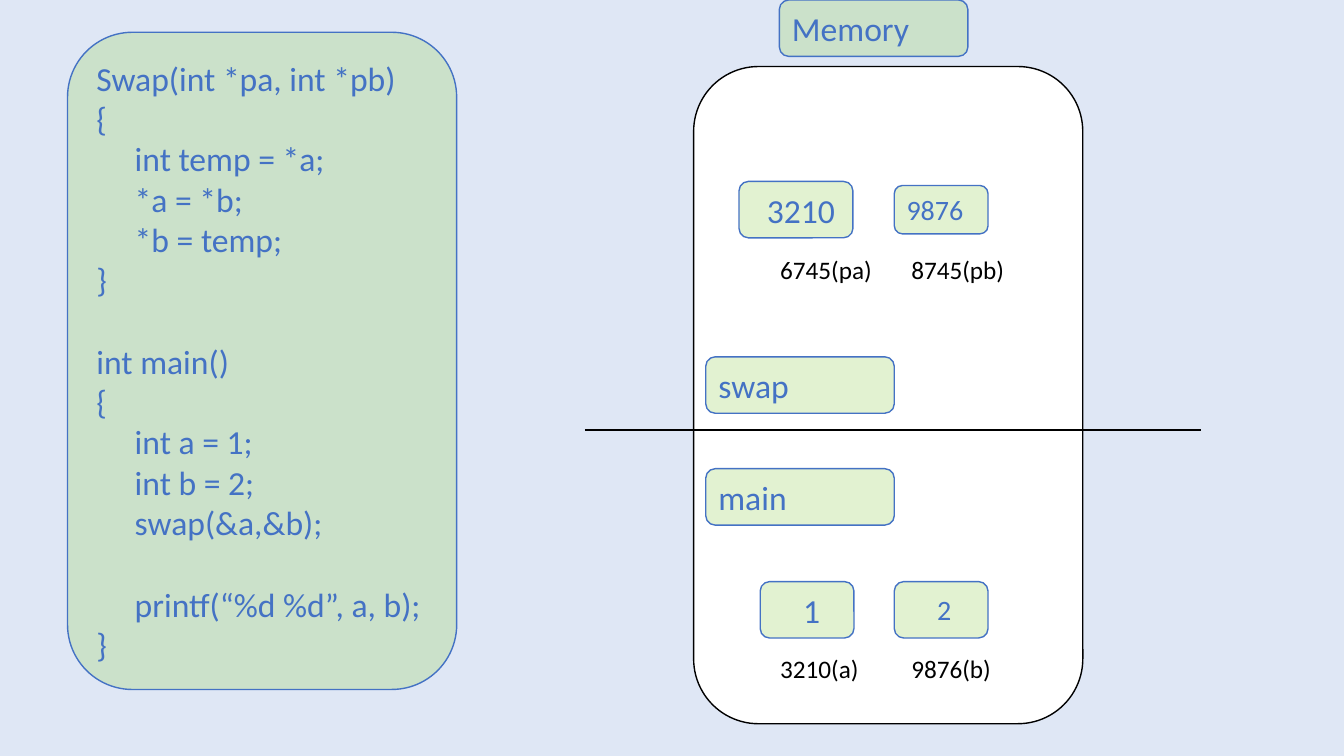
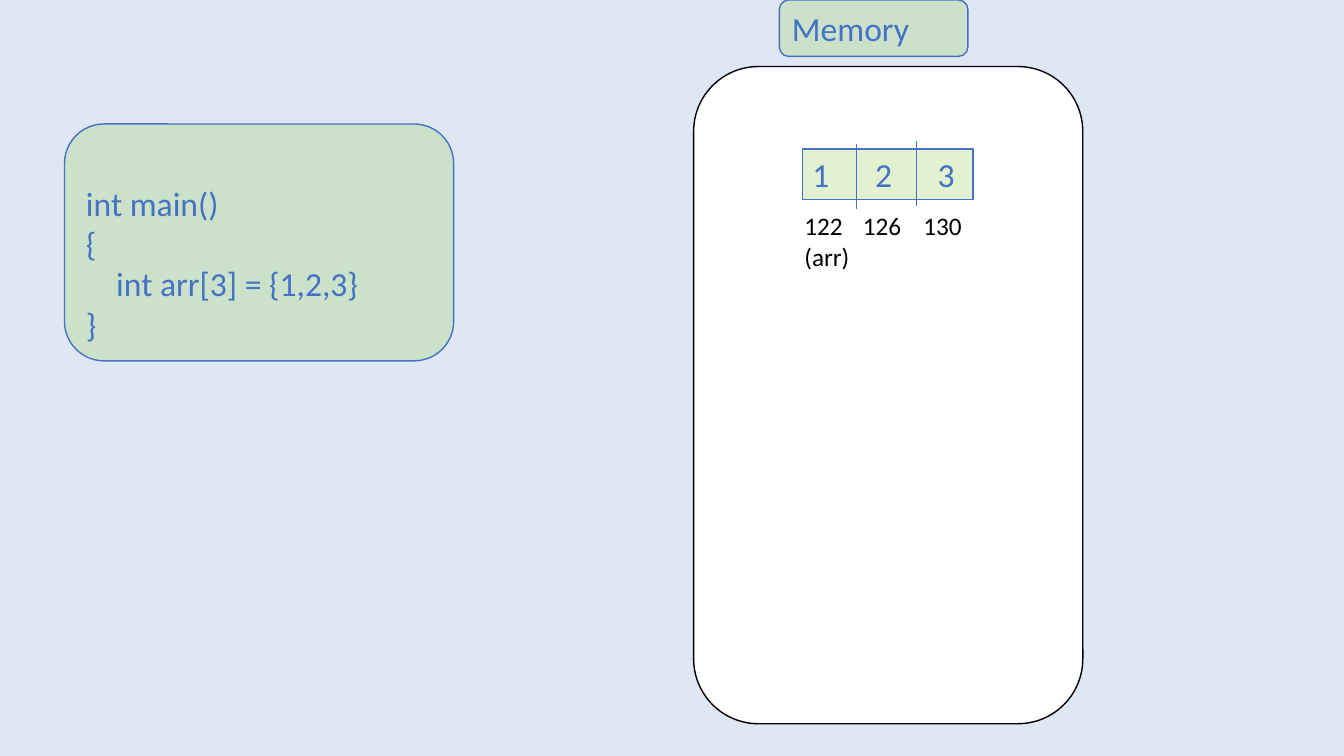
from collections import namedtuple

from lxml.etree import SubElement
from pptx import Presentation
from pptx.dml.color import RGBColor
from pptx.enum.shapes import MSO_CONNECTOR as CONNECTOR, MSO_SHAPE as SHAPE
from pptx.enum.text import MSO_ANCHOR as ANCHOR, PP_ALIGN as ALIGN
from pptx.oxml.ns import qn
from pptx.util import Pt

Box = namedtuple("Box", "left top width height")

PX = 9144  # EMU, 100 px to the inch
FONT = "Calibri"
COLORS = {
    "page": "DFE7F5",
    "blue": "4472C4",
    "green": "92D050",
    "white": "FFFFFF",
    "black": "000000",
}
GREEN_OPACITY = 26
CODE_SIZE = 24
CODE_LINE = 41
MEMORY = Box(688, 66, 386, 652)

SWAP_CODE = [
    (0, "Swap(int *pa, int *pb)"),
    (0, "{"),
    (1, "int temp = *a;"),
    (1, "*a = *b;"),
    (1, "*b = temp;"),
    (0, "}"),
    None,
    (0, "int main()"),
    (0, "{"),
    (1, "int a = 1;"),
    (1, "int b = 2;"),
    (1, "swap(&a,&b);"),
    None,
    (1, "printf(“%d %d”, a, b);"),
    (0, "}"),
]
ARRAY_CODE = [
    (0, "int main()"),
    (0, "{"),
    (1, "int arr[3] = {1,2,3}"),
    (0, "}"),
]


def rgb(name):
    return RGBColor.from_string(COLORS[name])


def emu(*lengths):
    return [length * PX for length in lengths]


def inside(outer, left, top, width, height):
    """Box whose corner is given from the corner of another box."""
    return Box(outer.left + left, outer.top + top, width, height)


def add_para(frame, text, size, color="blue", indent=0):
    """Fill the empty first paragraph, or append another one."""
    para = frame.paragraphs[0]
    if para.runs:
        para = frame.add_paragraph()
    para.text = text
    para.alignment = ALIGN.LEFT
    para._p.get_or_add_pPr().set("marL", str(indent * PX))
    for span in para.runs:
        span.font.name = FONT
        span.font.size = Pt(size)
        span.font.color.rgb = rgb(color)
    return para


def add_panel(page, box, kind=SHAPE.ROUNDED_RECTANGLE, fill="green", line="blue"):
    panel = page.shapes.add_shape(kind, *emu(*box))
    panel.shadow.inherit = False
    panel.fill.solid()
    panel.fill.fore_color.rgb = rgb(fill)
    if fill == "green":
        color = panel._element.spPr.find(f"{qn('a:solidFill')}/{qn('a:srgbClr')}")
        SubElement(color, qn("a:alpha"), val=str(GREEN_OPACITY * 1000))
    panel.line.color.rgb = rgb(line)
    panel.line.width = Pt(1)
    panel.text_frame.word_wrap = True
    panel.text_frame.vertical_anchor = ANCHOR.MIDDLE
    return panel


def add_tag(page, box, text, size=24, indent=0):
    add_para(add_panel(page, box).text_frame, text, size, indent=indent)


def add_address(page, box, *lines):
    frame = page.shapes.add_textbox(*emu(*box)).text_frame
    frame.word_wrap = True
    for line in lines:
        add_para(frame, line, 18, "black")


def add_line(page, start, end, color, weight):
    line = page.shapes.add_connector(CONNECTOR.STRAIGHT, *emu(*start, *end))
    line.line.color.rgb = rgb(color)
    line.line.width = Pt(weight)
    SubElement(line._element.spPr, qn("a:effectLst"))


def add_code(page, box, lines, indent, space_above=0):
    """Code panel; None in lines stands for a gap of one line."""
    frame = add_panel(page, box).text_frame
    frame.margin_top += space_above * PX
    gap = 0
    for line in lines:
        if line is None:
            gap = CODE_LINE
            continue
        level, text = line
        para = add_para(frame, text, CODE_SIZE, indent=level * indent)
        if gap:
            para.space_before = gap * PX
        gap = 0


def add_memory(page, box):
    add_panel(page, box, fill="white", line="black")
    add_tag(page, inside(box, 85, -66, 187, 56), "Memory")


def add_stack(page, box):
    """Frames of swap and main, split by a line."""
    add_tag(page, inside(box, 12, 288, 187, 56), "swap")
    add_tag(page, inside(box, 12, 399, 187, 56), "main")
    split = box.top + 361
    add_line(page, (box.left - 108, split), (box.left + 503, split), "black", 1.5)

    variables = [
        ((45, 114, 113, 56), "3210", 24, 15),
        ((199, 118, 93, 48), "9876", 20, 0),
        ((66, 511, 93, 56), "1", 24, 30),
        ((199, 511, 93, 56), "2", 20, 30),
    ]
    for place, value, size, indent in variables:
        add_tag(page, inside(box, *place), value, size, indent)

    for top, names in ((181, ("6745(pa)", "8745(pb)")), (577, ("3210(a)", "9876(b)"))):
        for left, name in zip((76, 206), names):
            add_address(page, inside(box, left, top, 113, 40), name)


def add_array(page, box):
    """Row of three numbers with dividers and addresses."""
    step = 62
    frame = add_panel(page, box, SHAPE.RECTANGLE).text_frame
    para = add_para(frame, "1\t2\t3", 24)
    tabs = SubElement(para._p.get_or_add_pPr(), qn("a:tabLst"))
    for stop in (1, 2):
        SubElement(tabs, qn("a:tab"), pos=str(stop * step * PX), algn="l")

    for left, top in ((53, -5), (113, -8)):
        x, y = box.left + left, box.top + top
        add_line(page, (x, y), (x, y + 64), "blue", 0.5)

    addresses = [(-8, 71, ("122", "(arr)")), (50, 40, ("126",)), (110, 40, ("130",))]
    for left, height, lines in addresses:
        add_address(page, inside(box, left, 56, 65, height), *lines)


def add_page(deck):
    page = deck.slides.add_slide(deck.slide_layouts[6])
    add_memory(page, MEMORY)
    return page


def main():
    deck = Presentation()
    deck.slide_width, deck.slide_height = emu(1333, 750)
    background = deck.slide_master.background.fill
    background.solid()
    background.fore_color.rgb = rgb("page")

    swap_page = add_page(deck)
    add_code(swap_page, Box(67, 32, 386, 652), SWAP_CODE, indent=38)
    add_stack(swap_page, MEMORY)

    array_page = add_page(deck)
    add_code(array_page, Box(64, 123, 386, 235), ARRAY_CODE, 30, CODE_LINE)
    add_array(array_page, inside(MEMORY, 108, 82, 169, 50))

    deck.save("out.pptx")


if __name__ == "__main__":
    main()
